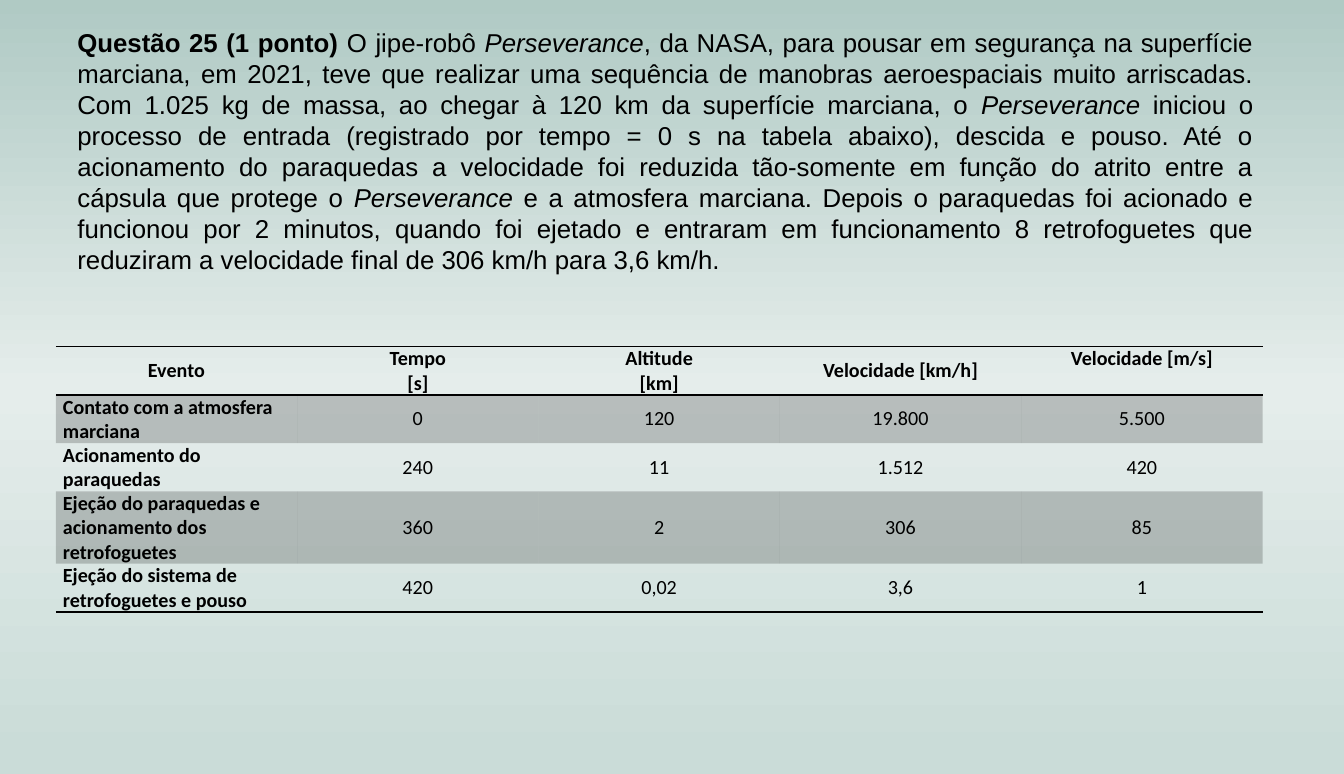
from copy import deepcopy

from pptx import Presentation
from pptx.dml.color import RGBColor as Rgb
from pptx.enum.text import MSO_ANCHOR as Anchor, MSO_AUTO_SIZE as Fit, PP_ALIGN as Align
from pptx.oxml.ns import qn
from pptx.oxml.xmlchemy import OxmlElement as Node
from pptx.util import Inches, Pt

COLORS = {"ink": "000000", "top": "B0CAC4", "mid": "E5EDEB", "low": "CADCD8"}
COLS, ROWS = 100, 75

INTRO = "Questão 25 (1 ponto) "
# Asterisks enclose the words in italics.
BODY = (
    "O jipe-robô *Perseverance*, da NASA, para pousar em segurança na superfície "
    "marciana, em 2021, teve que realizar uma sequência de manobras aeroespaciais "
    "muito arriscadas. Com 1.025 kg de massa, ao chegar à 120 km da superfície "
    "marciana, o *Perseverance* iniciou o processo de entrada (registrado por "
    "tempo = 0 s na tabela abaixo), descida e pouso. Até o acionamento do paraquedas "
    "a velocidade foi reduzida tão-somente em função do atrito entre a cápsula que "
    "protege o *Perseverance* e a atmosfera marciana. Depois o paraquedas foi acionado "
    "e funcionou por 2 minutos, quando foi ejetado e entraram em funcionamento 8 "
    "retrofoguetes que reduziram a velocidade final de 306 km/h para 3,6 km/h."
)
EVENTS = [
    ["Evento", "Tempo\n[s]", "Altitude\n[km]", "Velocidade [km/h]", "Velocidade [m/s]"],
    ["Contato com a atmosfera marciana", "0", "120", "19.800", "5.500"],
    ["Acionamento do paraquedas", "240", "11", "1.512", "420"],
    ["Ejeção do paraquedas e acionamento dos retrofoguetes", "360", "2", "306", "85"],
    ["Ejeção do sistema de retrofoguetes e pouso", "420", "0,02", "3,6", "1"],
]
LINES = [2, 2, 2, 3, 2]
HIGH_HEADS = (1, 4)


def put(para, text, size=14, font="Calibri", bold=False, italic=False):
    run = para.add_run()
    run.text = text
    face = run.font
    face.size, face.name, face.bold, face.italic = Pt(size), font, bold, italic
    face.color.rgb = Rgb.from_string(COLORS["ink"])


def edge(cell, sides):
    """Draw the given sides of a cell and hide the others."""
    props = cell._tc.get_or_add_tcPr()
    for spot, side in enumerate("LRTB"):
        line = Node(f"a:ln{side}")
        if side in sides:
            line.set("w", str(Pt(1)))
            fill = Node("a:solidFill")
            tint = Node("a:srgbClr")
            tint.set("val", COLORS["ink"])
            fill.append(tint)
        else:
            fill = Node("a:noFill")
        line.append(fill)
        props.insert(spot, line)


def shade(cell, dark):
    if not dark:
        cell.fill.background()
        return
    cell.fill.solid()
    cell.fill.fore_color.rgb = Rgb.from_string(COLORS["ink"])
    alpha = Node("a:alpha")
    alpha.set("val", "20000")
    cell._tc.tcPr.find(".//" + qn("a:srgbClr")).append(alpha)


class Page:
    def __init__(self, deck):
        self.slide = deck.slides.add_slide(deck.slide_layouts[6])
        self.col = deck.slide_width / COLS
        self.row = deck.slide_height / ROWS

    def area(self, left, top, width, height):
        """Turn grid columns and rows into lengths."""
        return (int(left * self.col), int(top * self.row),
                int(width * self.col), int(height * self.row))

    def backdrop(self, stops):
        fill = self.slide.background.fill
        fill.gradient()
        fill.gradient_angle = 270
        marks = self.slide.element.find(".//" + qn("a:gsLst"))
        marks.append(deepcopy(marks[-1]))
        for mark, (spot, name) in zip(fill.gradient_stops, stops):
            mark.position = spot
            mark.color.rgb = Rgb.from_string(COLORS[name])

    def text(self, area, intro, body):
        frame = self.slide.shapes.add_textbox(*self.area(*area)).text_frame
        frame.word_wrap = True
        frame.auto_size = Fit.SHAPE_TO_FIT_TEXT
        para = frame.paragraphs[0]
        para.alignment = Align.JUSTIFY
        para.space_after = Pt(6)
        put(para, intro, size=18, font="Arial", bold=True)
        for spot, part in enumerate(body.split("*")):
            put(para, part, size=18, font="Arial", italic=spot % 2 == 1)

    def table(self, left, top, width, data, lines, pitch):
        area = self.area(left, top, width, pitch * sum(lines))
        table = self.slide.shapes.add_table(len(data), len(data[0]), *area).table
        table.first_row = table.horz_banding = False
        for r, texts in enumerate(data):
            table.rows[r].height = int(lines[r] * pitch * self.row)
            sides = "TB" if r == 0 else "B" if r == len(data) - 1 else ""
            if r == 1:
                sides = "T"
            for c, text in enumerate(texts):
                cell = table.cell(r, c)
                self.fill_cell(cell, text, r == 0, c == 0)
                if r == 0 and c in HIGH_HEADS:
                    cell.vertical_anchor = Anchor.TOP
                shade(cell, r % 2 == 1)
                edge(cell, sides)

    def fill_cell(self, cell, text, head, first):
        cell.margin_left = cell.margin_right = Inches(0.07)
        cell.margin_top = cell.margin_bottom = 0
        cell.vertical_anchor = Anchor.MIDDLE
        frame = cell.text_frame
        for spot, part in enumerate(text.split("\n")):
            para = frame.add_paragraph() if spot else frame.paragraphs[0]
            para.alignment = Align.LEFT if first and not head else Align.CENTER
            put(para, part, bold=head or first)


def main():
    deck = Presentation()
    deck.slide_width, deck.slide_height = Inches(13.02), Inches(7.5)
    page = Page(deck)
    page.backdrop([(0, "top"), (0.5, "mid"), (0.98, "low")])
    page.text((5, 2.1, 89, 25.2), INTRO, BODY)
    page.table(4.15, 33.6, 89.8, EVENTS, LINES, 2.33)
    deck.save("out.pptx")


if __name__ == "__main__":
    main()
